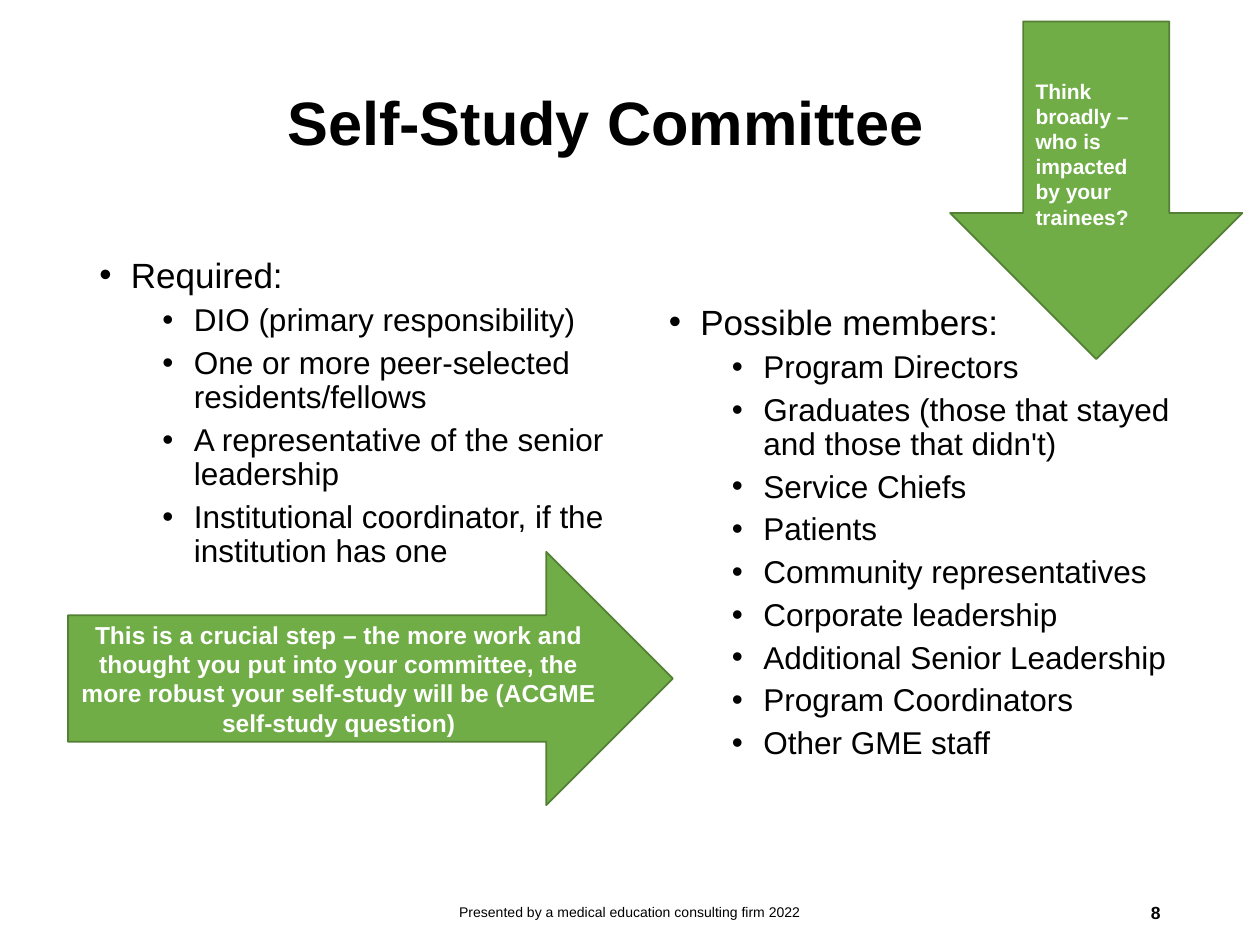
from dataclasses import dataclass
from pptx import Presentation
from pptx.dml.color import RGBColor as RGB
from pptx.enum.shapes import MSO_SHAPE as Shape
from pptx.enum.text import MSO_ANCHOR as Anchor, MSO_AUTO_SIZE as Fit, PP_ALIGN as Align
from pptx.oxml.ns import qn
from pptx.util import Inches, Pt

COLS, ROWS = 100, 75  # slide grid
WIDE, HIGH = Inches(10), Inches(7.5)


@dataclass(frozen=True)
class Theme:
    face: str = "Arial"
    ink: RGB = RGB(0, 0, 0)
    white: RGB = RGB(255, 255, 255)
    green: RGB = RGB(0x70, 0xAD, 0x47)
    edge: RGB = RGB(0x53, 0x80, 0x35)
    title: int = 35
    head: int = 20
    item: int = 18
    note: int = 14
    hint: int = 12
    page: int = 10
    foot: int = 8


LOOK = Theme()


def grid(col, row, wide, high):
    """Turn grid columns and rows into slide lengths."""
    cell, line = WIDE / COLS, HIGH / ROWS
    return [round(n) for n in (col * cell, row * line, wide * cell, high * line)]


def style(para, size, color=LOOK.ink, bold=False, align=Align.LEFT):
    para.alignment = align
    font = para.font
    font.name, font.size, font.bold = LOOK.face, Pt(size), bold
    font.color.rgb = color


def frame(shape, anchor=Anchor.MIDDLE):
    text = shape.text_frame
    text.word_wrap = True
    text.auto_size = Fit.NONE
    text.vertical_anchor = anchor
    return text


def heading(slide, box, words):
    title = slide.shapes.title
    title.left, title.top, title.width, title.height = box
    text = frame(title)
    text.text = words
    para = text.paragraphs[0]
    para.line_spacing = 0.9
    style(para, LOOK.title, bold=True)


def bullet(para, indent):
    props = para._p.get_or_add_pPr()
    props.set("marL", str(Inches(indent)))
    props.set("indent", str(Inches(-0.25)))
    props.append(props.makeelement(qn("a:buFont"), {"typeface": LOOK.face}))
    props.append(props.makeelement(qn("a:buChar"), {"char": "•"}))


def members(slide, box, head, items):
    text = frame(slide.shapes.add_textbox(*box), Anchor.TOP)
    for spot, words in enumerate([head, *items]):
        para = text.add_paragraph() if spot else text.paragraphs[0]
        para.text = words
        para.level = 1 if spot else 0
        bullet(para, 0.75 if spot else 0.25)
        para.line_spacing = 0.9
        para.space_before = Pt(5 if spot else 0)
        style(para, LOOK.item if spot else LOOK.head)


def arrow(slide, box, kind, words, size, align):
    shape = slide.shapes.add_shape(kind, *box)
    shape.shadow.inherit = False
    shape.fill.solid()
    shape.fill.fore_color.rgb = LOOK.green
    shape.line.color.rgb = LOOK.edge
    shape.line.width = Pt(1)
    text = frame(shape)
    text.text = words
    style(text.paragraphs[0], size, LOOK.white, True, align)


def label(slide, box, words, size, align, bold=False):
    text = frame(slide.shapes.add_textbox(*box))
    text.text = words
    style(text.paragraphs[0], size, bold=bold, align=align)


def main():
    deck = Presentation()
    deck.slide_width, deck.slide_height = WIDE, HIGH
    slide = deck.slides.add_slide(deck.slide_layouts[5])

    # Title and the two member lists
    heading(slide, grid(21.8, 2.7, 71.4, 14.5), "Self-Study Committee")
    members(slide, grid(6.9, 20, 42.5, 47.6), "Required:", [
        "DIO (primary responsibility)",
        "One or more peer-selected residents/fellows",
        "A representative of the senior leadership",
        "Institutional coordinator, if the institution has one",
    ])
    members(slide, grid(52.1, 23.7, 42.5, 47.6), "Possible members:", [
        "Program Directors",
        "Graduates (those that stayed and those that didn't)",
        "Service Chiefs",
        "Patients",
        "Community representatives",
        "Corporate leadership",
        "Additional Senior Leadership",
        "Program Coordinators",
        "Other GME staff",
    ])

    # Page number and footer
    label(slide, grid(70.6, 70.4, 22.5, 4), "8", LOOK.page, Align.RIGHT, True)
    label(slide, grid(33.1, 70.4, 33.8, 4),
          "Presented by a medical education consulting firm 2022",
          LOOK.foot, Align.CENTER)

    # Arrows with advice
    arrow(slide, grid(75.4, 1.7, 23.2, 26.8), Shape.DOWN_ARROW,
          "Think broadly – who is impacted by your trainees?",
          LOOK.hint, Align.LEFT)
    arrow(slide, grid(5.4, 43.8, 48, 20.1), Shape.RIGHT_ARROW,
          "This is a crucial step – the more work and thought you put into your "
          "committee, the more robust your self-study will be (ACGME self-study "
          "question)", LOOK.note, Align.CENTER)

    deck.save("out.pptx")


if __name__ == "__main__":
    main()
